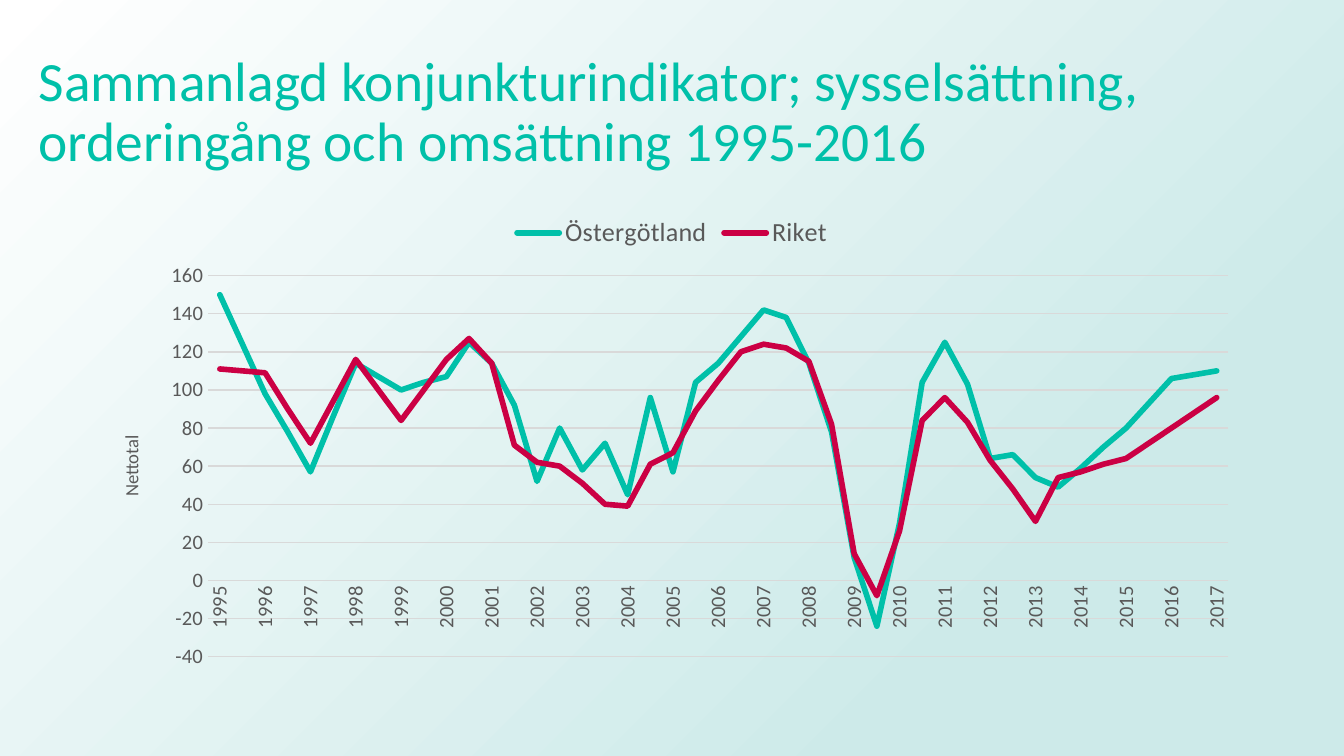
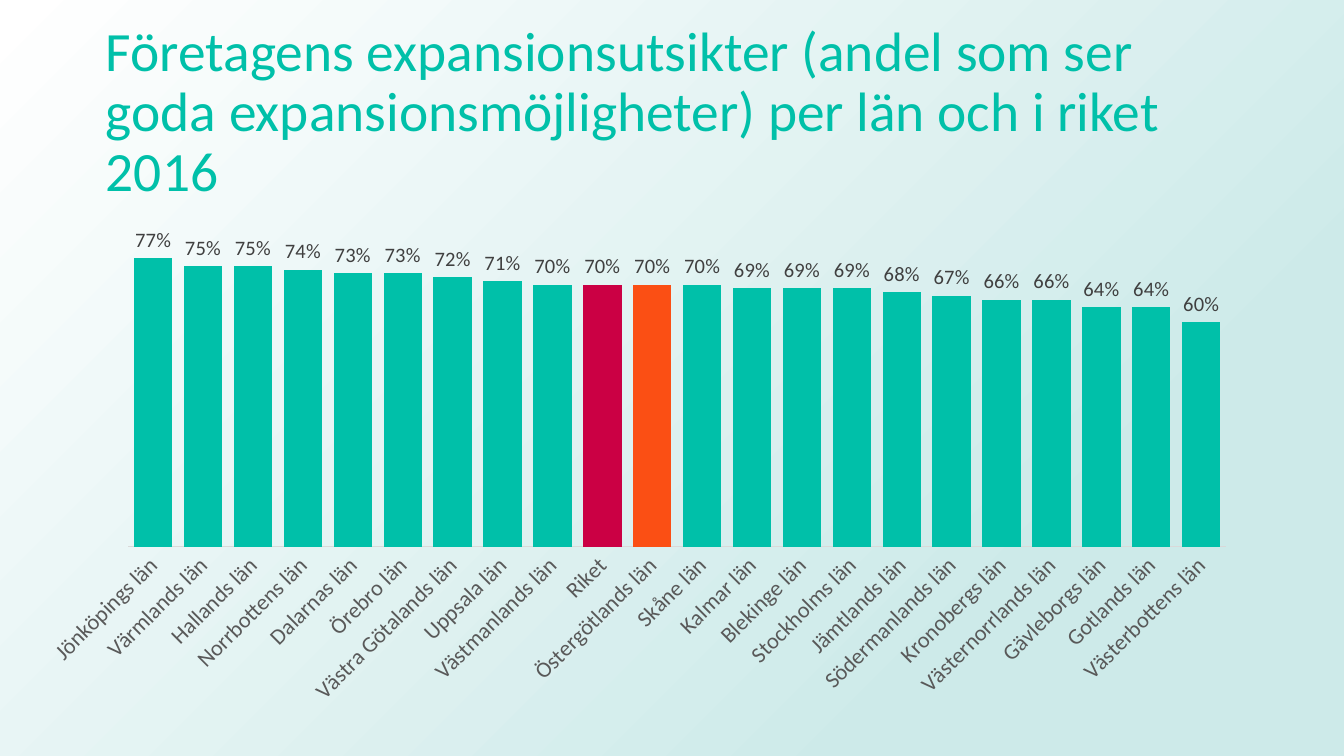
import pptx
import pptx.chart.data
import pptx.dml.color
import pptx.enum.chart
import pptx.enum.shapes
import pptx.enum.text
import pptx.oxml
import pptx.oxml.ns
import pptx.util

Cm = pptx.util.Cm
Pt = pptx.util.Pt

FONT = "Calibri"
COLORS = {
    "teal": "00C0A9",
    "crimson": "CB0044",
    "orange": "FB4F14",
    "mist": "CDEAE9",
    "white": "FFFFFF",
    "rule": "D9D9D9",
    "axis": "595959",
    "label": "404040",
    "black": "000000",
}
SLIDE_WIDTH, SLIDE_HEIGHT = Cm(25.4), Cm(14.29)
TITLE_TOP, TITLE_HEIGHT = Cm(0.76), Cm(2.77)
CHART_TOP = Cm(3.81)

HALF_YEARS = [str(1995 + index // 2) for index in range(45)]
INDICATORS = {
    "Östergötland": [
        150, 124, 98, 78, 57, 86, 114, 107, 100, 104, 107, 125, 114, 92, 52,
        80, 58, 72, 45, 96, 57, 104, 114, 128, 142, 138, 114, 78, 12, -24,
        30, 104, 125, 103, 64, 66, 54, 49, 59, 70, 80, 93, 106, 108, 110,
    ],
    "Riket": [
        111, 110, 109, 90, 72, 94, 116, 100, 84, 100, 116, 127, 114, 71, 62,
        60, 51, 40, 39, 61, 67, 89, 105, 120, 124, 122, 115, 82, 14, -8,
        26, 84, 96, 83, 63, 48, 31, 54, 57, 61, 64, 72, 80, 88, 96],
}
INDICATOR_COLORS = ["teal", "crimson"]
EXPANSION_SHARES = {
    "Jönköpings län": 0.77, "Värmlands län": 0.75, "Hallands län": 0.75,
    "Norrbottens län": 0.74, "Dalarnas län": 0.73, "Örebro län": 0.73,
    "Västra Götalands län": 0.72, "Uppsala län": 0.71,
    "Västmanlands län": 0.7, "Riket": 0.7, "Östergötlands län": 0.7,
    "Skåne län": 0.7, "Kalmar län": 0.69, "Blekinge län": 0.69,
    "Stockholms län": 0.69, "Jämtlands län": 0.68,
    "Södermanlands län": 0.67, "Kronobergs län": 0.66,
    "Västernorrlands län": 0.66, "Gävleborgs län": 0.64,
    "Gotlands län": 0.64, "Västerbottens län": 0.6,
}
HIGHLIGHTS = {"Riket": "crimson", "Östergötlands län": "orange"}


def rgb(name):
    """Return the named colour."""
    return pptx.dml.color.RGBColor.from_string(COLORS[name])


def style_font(font, size, color):
    """Set typeface, size and colour of a font."""
    font.name = FONT
    font.size = Pt(size)
    font.color.rgb = rgb(color)


def style_line(line, color, width):
    """Set colour and width of a line."""
    line.color.rgb = rgb(color)
    line.width = Pt(width)


def add_backdrop(slide):
    """Cover the slide with a radial gradient centred bottom right."""
    shape = slide.shapes.add_shape(
        pptx.enum.shapes.MSO_SHAPE.RECTANGLE, 0, 0, SLIDE_WIDTH, SLIDE_HEIGHT)
    shape.shadow.inherit = False
    shape.line.fill.background()
    shape.fill.background()
    gradient = pptx.oxml.parse_xml(
        f'<a:gradFill {pptx.oxml.ns.nsdecls("a")} rotWithShape="1"><a:gsLst>'
        f'<a:gs pos="23000"><a:srgbClr val="{COLORS["mist"]}"/></a:gs>'
        f'<a:gs pos="100000"><a:srgbClr val="{COLORS["white"]}"/></a:gs>'
        '</a:gsLst><a:path path="circle">'
        '<a:fillToRect l="100000" t="100000"/></a:path></a:gradFill>')
    properties = shape.element.spPr
    properties.replace(properties.xpath("./a:noFill")[0], gradient)


def add_title(slide, text, left, width):
    """Add the slide title."""
    box = slide.shapes.add_textbox(left, TITLE_TOP, width, TITLE_HEIGHT)
    text_frame = box.text_frame
    text_frame.word_wrap = True
    text_frame.vertical_anchor = pptx.enum.text.MSO_ANCHOR.MIDDLE
    text_frame.text = text
    paragraph = text_frame.paragraphs[0]
    paragraph.line_spacing = 0.9
    style_font(paragraph.runs[0].font, 29.7, "teal")


def add_slide(presentation, title, left, width):
    """Add a blank slide with backdrop and title."""
    slide = presentation.slides.add_slide(presentation.slide_layouts[6])
    add_backdrop(slide)
    add_title(slide, title, left, width)
    return slide


def place_plot(chart, **fractions):
    """Fix the inner plot area as fractions of the chart."""
    plot_area = chart.element.xpath(".//c:plotArea")[0]
    for layout in plot_area.xpath("./c:layout"):
        plot_area.remove(layout)
    sizes = "".join(
        f'<c:{key} val="{value}"/>' for key, value in fractions.items())
    plot_area.insert(0, pptx.oxml.parse_xml(
        f'<c:layout {pptx.oxml.ns.nsdecls("c")}><c:manualLayout>'
        '<c:layoutTarget val="inner"/><c:xMode val="edge"/>'
        f'<c:yMode val="edge"/>{sizes}</c:manualLayout></c:layout>'))


def style_category_axis(chart, size, degrees):
    """Style the category axis and turn its labels."""
    axis = chart.category_axis
    axis.major_tick_mark = pptx.enum.chart.XL_TICK_MARK.NONE
    style_font(axis.tick_labels.font, size, "axis")
    style_line(axis.format.line, "rule", 0.75)
    body = chart.element.xpath(".//c:catAx/c:txPr/a:bodyPr")[0]
    body.set("rot", str(degrees * 60000))
    body.set("vert", "horz")


def add_chart(slide, kind, categories, series, left, width, height):
    """Add a chart with the shared base font."""
    data = pptx.chart.data.CategoryChartData()
    data.categories = categories
    for name, values in series.items():
        data.add_series(name, values)
    chart = slide.shapes.add_chart(
        kind, left, CHART_TOP, width, height, data).chart
    style_font(chart.font, 10, "black")
    chart.has_title = False
    chart.has_legend = False
    return chart


def add_indicator_chart(slide):
    """Add the line chart of the business cycle indicator."""
    chart = add_chart(
        slide, pptx.enum.chart.XL_CHART_TYPE.LINE, HALF_YEARS, INDICATORS,
        Cm(1.75), Cm(21.9), Cm(9.04))
    place_plot(chart, x=0.1, y=0.155, w=0.88, h=0.797)
    for series, color in zip(chart.plots[0].series, INDICATOR_COLORS):
        series.smooth = False
        style_line(series.format.line, color, 3)
    for line in chart.element.xpath(".//c:ser/c:spPr/a:ln"):
        line.set("cap", "rnd")

    chart.has_legend = True
    chart.legend.position = pptx.enum.chart.XL_LEGEND_POSITION.TOP
    chart.legend.include_in_layout = False
    style_font(chart.legend.font, 14, "axis")

    style_category_axis(chart, 11, -90)
    chart.element.xpath(".//c:catAx/c:noMultiLvlLbl")[0].addprevious(
        pptx.oxml.parse_xml(
            f'<c:tickLblSkip {pptx.oxml.ns.nsdecls("c")} val="2"/>'))

    axis = chart.value_axis
    axis.minimum_scale, axis.maximum_scale, axis.major_unit = -40, 160, 20
    axis.major_tick_mark = pptx.enum.chart.XL_TICK_MARK.NONE
    axis.format.line.fill.background()
    style_line(axis.major_gridlines.format.line, "rule", 0.75)
    style_font(axis.tick_labels.font, 11, "axis")
    axis.tick_labels.number_format = "0"
    axis.tick_labels.number_format_is_linked = False
    text_frame = axis.axis_title.text_frame
    text_frame.text = "Nettotal"
    run = text_frame.paragraphs[0].runs[0]
    style_font(run.font, 10, "axis")
    run.font.bold = False


def add_expansion_chart(slide):
    """Add the column chart of expansion prospects by county."""
    chart = add_chart(
        slide, pptx.enum.chart.XL_CHART_TYPE.COLUMN_CLUSTERED,
        list(EXPANSION_SHARES), {"Series 1": list(EXPANSION_SHARES.values())},
        Cm(0.48), Cm(23.16), Cm(9.7))
    place_plot(chart, x=0.084, y=0.016, w=0.896, h=0.657)
    plot = chart.plots[0]
    plot.gap_width = 30
    plot.vary_by_categories = False
    series = plot.series[0]
    series.format.fill.solid()
    series.format.fill.fore_color.rgb = rgb("teal")
    for index, county in enumerate(EXPANSION_SHARES):
        if county in HIGHLIGHTS:
            fill = series.points[index].format.fill
            fill.solid()
            fill.fore_color.rgb = rgb(HIGHLIGHTS[county])

    labels = series.data_labels
    labels.show_value = True
    labels.number_format = "0%"
    labels.number_format_is_linked = False
    labels.position = pptx.enum.chart.XL_LABEL_POSITION.OUTSIDE_END
    style_font(labels.font, 11, "label")

    style_category_axis(chart, 12, -45)
    axis = chart.value_axis
    axis.minimum_scale, axis.maximum_scale = 0, 0.9
    axis.has_major_gridlines = False
    axis.tick_labels.number_format = "0%"
    axis.tick_labels.number_format_is_linked = False
    axis.visible = False


def main():
    """Build and save the presentation."""
    presentation = pptx.Presentation()
    presentation.slide_width = SLIDE_WIDTH
    presentation.slide_height = SLIDE_HEIGHT
    add_indicator_chart(add_slide(
        presentation,
        "Sammanlagd konjunkturindikator; sysselsättning, "
        "orderingång och omsättning 1995-2016",
        Cm(0.48), Cm(25.45)))
    add_expansion_chart(add_slide(
        presentation,
        "Företagens expansionsutsikter (andel som ser goda "
        "expansionsmöjligheter) per län och i riket 2016",
        Cm(1.75), Cm(21.9)))
    presentation.save("out.pptx")


if __name__ == "__main__":
    main()
